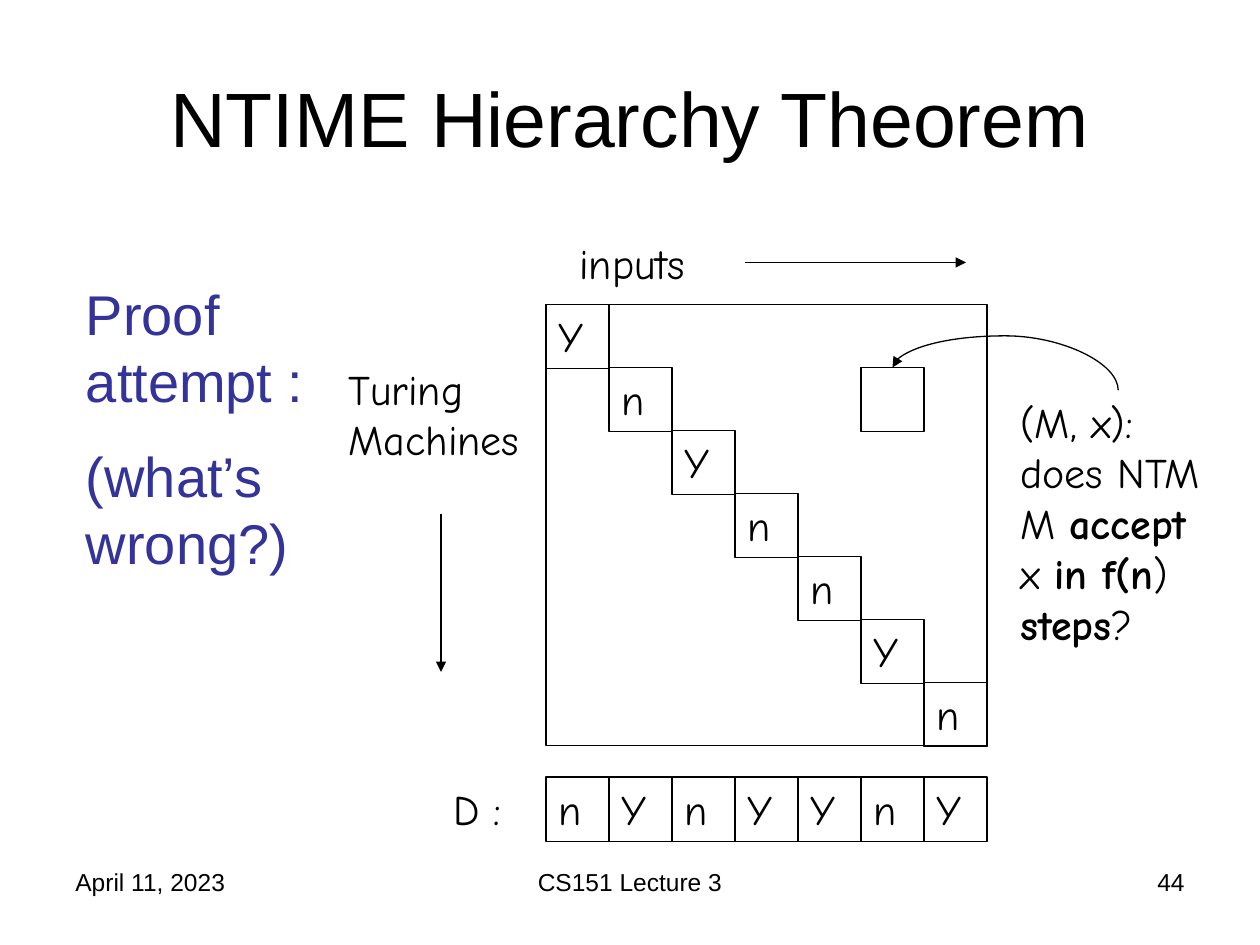
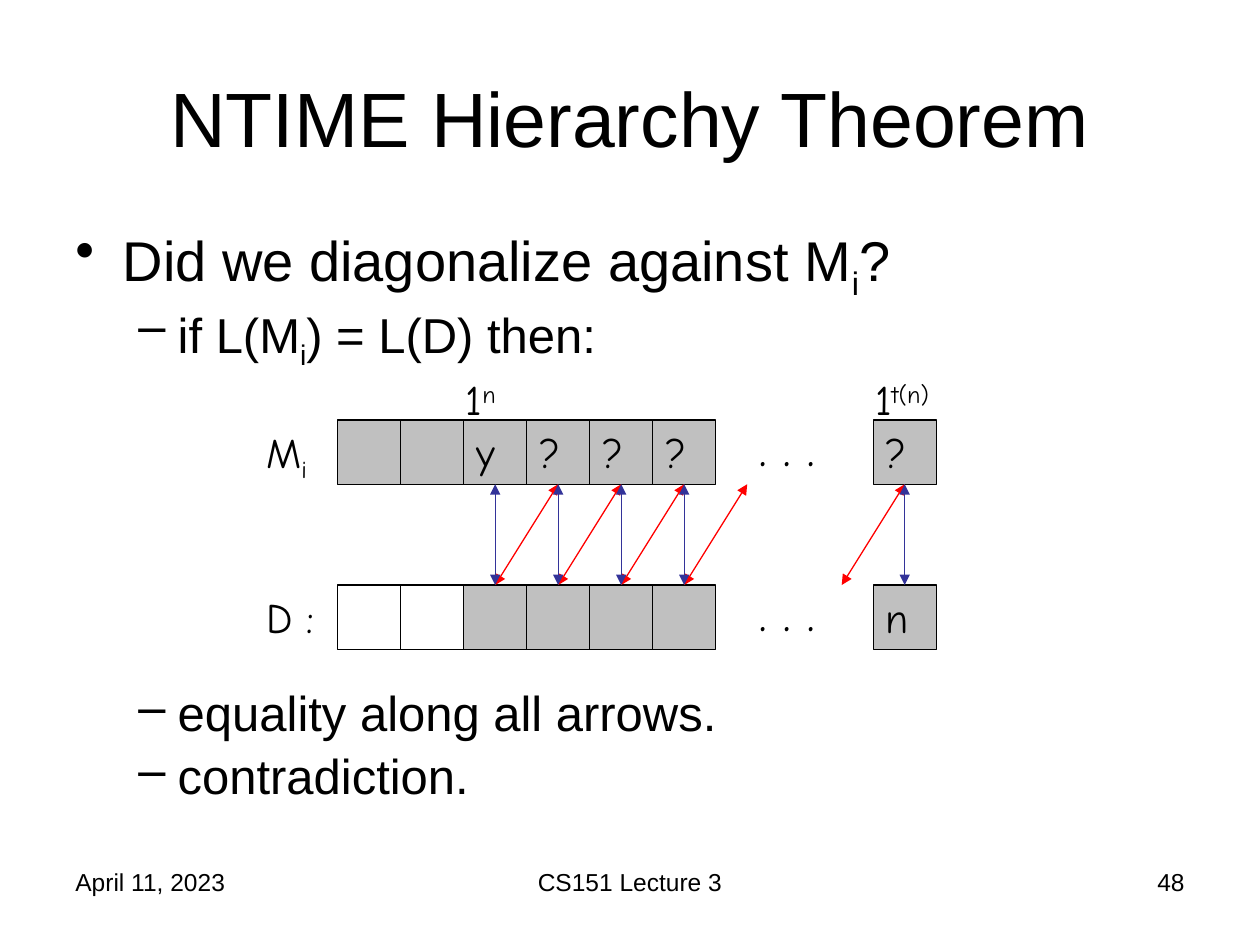
import pptx
import pptx.util
import pptx.dml.color
import pptx.enum.shapes
import pptx.enum.text
import pptx.oxml.ns
import lxml.etree

Pt = pptx.util.Pt
Align = pptx.enum.text.PP_ALIGN
Anchor = pptx.enum.text.MSO_ANCHOR
Connector = pptx.enum.shapes.MSO_CONNECTOR

BLACK, INDIGO, RED, GRAY = "000000", "333399", "FF0000", "C0C0C0"
SANS, HAND = "Arial", "Comic Neue"
CELL_WIDTH, CELL_HEIGHT = 36, 36.7
TOP_SIDE, BOTTOM_SIDE = 0, 2


def color(value):
    return pptx.dml.color.RGBColor.from_string(value)


def add_child(parent, tag, **attributes):
    child = lxml.etree.SubElement(parent, pptx.oxml.ns.qn(tag))
    for name, value in attributes.items():
        child.set(name, str(value))
    return child


def write_para(para, runs, size, face=HAND, ink=BLACK, align=Align.LEFT):
    para.alignment = align
    para.font.size = Pt(size)
    para.font.name = face
    para.font.color.rgb = color(ink)
    for words, style in runs:
        span = para.add_run()
        span.text = words
        if style == "bold":
            span.font.bold = True
        elif style:
            span.font._element.set("baseline", str(style * 1000))


def add_text(page, box, paragraphs, size, face=HAND, ink=BLACK, align=Align.LEFT,
             anchor=Anchor.TOP, wrap=True, gap=0):
    frame = page.shapes.add_textbox(*map(Pt, box)).text_frame
    frame.word_wrap = wrap
    frame.vertical_anchor = anchor
    for index, runs in enumerate(paragraphs):
        para = frame.add_paragraph() if index else frame.paragraphs[0]
        write_para(para, runs, size, face, ink, align)
        if index:
            para.space_before = Pt(gap)
    return frame


def add_label(page, box, words, size=24, **options):
    return add_text(page, box, [[(words, None)]], size, **options)


def add_rectangle(page, box, fill=None):
    shape = page.shapes.add_shape(pptx.enum.shapes.MSO_SHAPE.RECTANGLE, *map(Pt, box))
    shape.shadow.inherit = False
    if fill:
        shape.fill.solid()
        shape.fill.fore_color.rgb = color(fill)
    else:
        shape.fill.background()
    shape.line.color.rgb = color(BLACK)
    shape.line.width = Pt(0.75)
    return shape


def add_cell(page, left, top, words="", fill=None):
    shape = add_rectangle(page, (left, top, CELL_WIDTH, CELL_HEIGHT), fill)
    frame = shape.text_frame
    frame.word_wrap = True
    frame.vertical_anchor = Anchor.TOP
    if words:
        write_para(frame.paragraphs[0], [(words, None)], 24)
    return shape


def add_arrow(page, start, end, ink=BLACK, double=False, kind=Connector.STRAIGHT):
    arrow = page.shapes.add_connector(kind, *map(Pt, (*start, *end)))
    arrow.line.color.rgb = color(ink)
    arrow.line.width = Pt(0.75)
    line = arrow.line._get_or_add_ln()
    if double:
        add_child(line, "a:headEnd", type="triangle")
    add_child(line, "a:tailEnd", type="triangle")
    add_child(arrow.element.spPr, "a:effectLst")
    return arrow


def add_turned_curve(page, box, bend):
    left, top, width, height = box
    arrow = add_arrow(page, (left + width, top), (left, top + height), kind=Connector.CURVE)
    properties = arrow.element.spPr
    properties.xfrm.set("rot", str(90 * 60000))
    guides = properties.find(".//" + pptx.oxml.ns.qn("a:avLst"))
    add_child(guides, "a:gd", name="adj1", fmla=f"val {round(bend * 100000)}")


def add_frame(page, box, number):
    left, top, width, height = box
    add_label(page, (left + 36, top + 21.6, width - 72, 90), "NTIME Hierarchy Theorem",
              size=44, face=SANS, align=Align.CENTER, anchor=Anchor.MIDDLE)
    footers = [
        (36, 168, "April 11, 2023", Align.LEFT),
        (246, 228, "CS151 Lecture 3", Align.CENTER),
        (516, 168, number, Align.RIGHT),
    ]
    for offset, span_width, words, align in footers:
        add_label(page, (left + offset, top + height - 48, span_width, 37.5), words,
                  size=14, face=SANS, align=align)


def add_machine_table(page, box):
    left, top, side, _ = box
    add_rectangle(page, box)
    add_label(page, (left + 12, top - 42, 132, 36), "inputs")
    add_arrow(page, (left + 114, top - 24), (left + 240, top - 24))
    add_label(page, (left - 120, top - 30 + 60, 132, 65), "Turing Machines")
    add_arrow(page, (left - 60, top + 120), (left - 60, top + 210))

    verdicts = "YnYnnYn"
    flipped = "nYnYYnY"
    for index, (verdict, opposite) in enumerate(zip(verdicts, flipped)):
        offset = index * CELL_WIDTH
        add_cell(page, left + offset, top + offset, verdict)
        add_cell(page, left + offset, top + side + 18, opposite)
    add_label(page, (left - 60, top + side + 18, 60, 36), "D :")

    add_cell(page, left + 5 * CELL_WIDTH, top + CELL_WIDTH)
    add_turned_curve(page, (left + 256, top - 22, 13, 129), 2.39)
    question = [
        ("(M, x): does NTM M ", None), ("accept", "bold"), (" x ", None),
        ("in f(n", "bold"), (") ", None), ("steps", "bold"), ("?", None),
    ]
    add_text(page, (left + 264, top + 49, 126, 180), [question], 24)


def add_argument(page, box):
    paragraphs = [
        [("Did we diagonalize against M", None), ("i", -25), ("?", None)],
        [("if L(M", None), ("i", -25), (") = L(D) then:", None)],
        [("equality along all arrows.", None)],
        [("contradiction.", None)],
    ]
    room_for_tapes = 185
    frame = add_text(page, box, paragraphs, 28, face=SANS, gap=5.6)
    frame.paragraphs[0].font.size = Pt(32)
    frame.paragraphs[2].space_before = Pt(room_for_tapes)
    for index, para in enumerate(frame.paragraphs):
        para.line_spacing = 0.9
        margin, indent, mark = (58.5, -22.5, "–") if index else (27, -27, "•")
        properties = para._p.get_or_add_pPr()
        properties.set("marL", str(Pt(margin)))
        properties.set("indent", str(Pt(indent)))
        bullet = properties.makeelement(pptx.oxml.ns.qn("a:buChar"), {"char": mark})
        properties.find(pptx.oxml.ns.qn("a:defRPr")).addprevious(bullet)


def add_tape(page, left, top, symbols, fills):
    columns = [*range(6), 8.5]
    add_label(page, (left + 234, top - 5, 60, 41), ". . .", size=28)
    return [add_cell(page, left + column * CELL_WIDTH, top, symbol.strip(), fill)
            for column, symbol, fill in zip(columns, symbols, fills)]


def add_tapes(page, box):
    left, top, width, height = box
    lower = top + height - CELL_HEIGHT
    machine = add_tape(page, left, top, "  y????", [GRAY] * 7)
    diagonal = add_tape(page, left, lower, "      n", [None] * 2 + [GRAY] * 5)
    add_text(page, (left - 48, top, 40, 36), [[("M", None), ("i", -25)]], 24, wrap=False)
    add_label(page, (left - 48, lower, 60, 36), "D :")
    add_text(page, (left + 66, top - 30, 34, 36), [[("1", None), ("n", 30)]], 24, wrap=False)
    add_text(page, (left + 300, top - 30, 52.5, 36), [[("1", None), ("t(n)", 30)]], 24,
             wrap=False)

    upper_edge = top + CELL_HEIGHT
    center = left + CELL_WIDTH / 2
    slanted = [(column + 1, column) for column in range(2, 6)] + [(8.5, 7.5)]
    slots = {**{column: column for column in range(6)}, 8.5: 6}
    for upper_column, lower_column in slanted:
        arrow = add_arrow(page, (center + upper_column * CELL_WIDTH, upper_edge),
                          (center + lower_column * CELL_WIDTH, lower), RED, double=True)
        if upper_column in slots:
            arrow.begin_connect(machine[slots[upper_column]], BOTTOM_SIDE)
        if lower_column in slots:
            arrow.end_connect(diagonal[slots[lower_column]], TOP_SIDE)
    for source, target in zip(machine[2:], diagonal[2:]):
        arrow = add_arrow(page, (center, upper_edge), (center, lower), INDIGO, double=True)
        arrow.begin_connect(source, BOTTOM_SIDE)
        arrow.end_connect(target, TOP_SIDE)


def main():
    deck = pptx.Presentation()
    deck.slide_width, deck.slide_height = Pt(720), Pt(540)
    blank = deck.slide_layouts[6]
    whole = (0, 0, 720, 540)

    attempt = deck.slides.add_slide(blank)
    add_frame(attempt, whole, "44")
    add_machine_table(attempt, (312, 174, 252, 252))
    add_text(attempt, (42, 156, 144, 181.5),
             [[("Proof attempt :", None)], [("(what’s wrong?)", None)]],
             32, face=SANS, ink=INDIGO, gap=16)

    contradiction = deck.slides.add_slide(blank)
    add_frame(contradiction, whole, "48")
    add_argument(contradiction, (36, 126, 648, 356.5))
    add_tapes(contradiction, (193, 240, 342, 131))

    deck.save("out.pptx")


if __name__ == "__main__":
    main()
